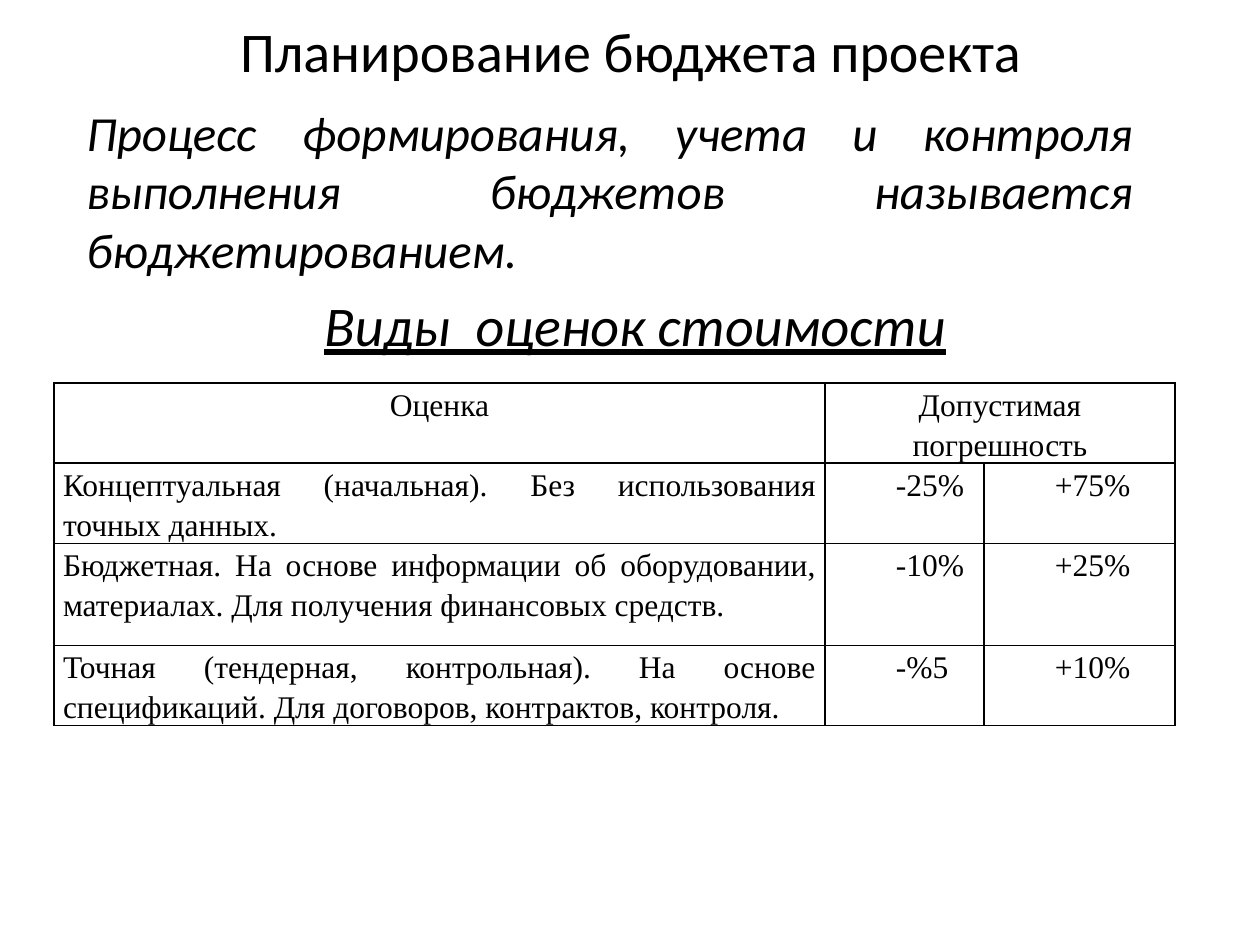
import pptx
import pptx.util
import pptx.dml.color
import pptx.enum.text
import pptx.oxml
import pptx.oxml.ns

# Content
TITLE = "Планирование бюджета проекта"
INTRO = ("Процесс формирования, учета и контроля выполнения бюджетов "
         "называется бюджетированием.")
HEADING = "Виды  оценок стоимости"
ROWS = [
    ("Оценка", "Допустимая погрешность", None),
    ("Концептуальная (начальная). Без использования точных данных.",
     "-25%", "+75%"),
    ("Бюджетная. На основе информации об оборудовании, материалах. "
     "Для получения финансовых средств.", "-10%", "+25%"),
    ("Точная (тендерная, контрольная). На основе спецификаций. "
     "Для договоров, контрактов, контроля.", "-%5", "+10%"),
]

# Layout in px
BOXES = {"title": (64, 26, 1134, 48), "intro": (74, 96, 1071, 191),
         "head": (312, 284, 654, 80)}
LEFT, TOP = 54, 383
COLS = [771, 159, 191]
HIGH = [70, 70, 102, 70]
PAD, INDENT = 9, 62

Align = pptx.enum.text.PP_ALIGN
Anchor = pptx.enum.text.MSO_ANCHOR
THEME = {
    "ink": "000000", "line": 1,
    "title": {"name": "Calibri", "size": 32},
    "intro": {"name": "Calibri", "size": 28, "italic": True},
    "head": {"name": "Calibri", "size": 32, "italic": True,
             "underline": True},
    "cell": {"name": "Times New Roman", "size": 18, "bold": False},
}


def px(n):
    return pptx.util.Emu(round(n * 914400 / 126))


def place(shape, key):
    for name, n in zip(("left", "top", "width", "height"), BOXES[key]):
        setattr(shape, name, px(n))


def write(frame, text, key, align):
    para = frame.paragraphs[0]
    para.alignment = align
    run = para.add_run()
    run.text = text
    for name, value in THEME[key].items():
        if name == "size":
            value = pptx.util.Pt(value)
        setattr(run.font, name, value)
    run.font.color.rgb = pptx.dml.color.RGBColor.from_string(THEME["ink"])
    return para


def border(cell):
    props = cell._tc.get_or_add_tcPr()
    width = pptx.util.Pt(THEME["line"])
    for n, side in enumerate(("lnL", "lnR", "lnT", "lnB")):
        props.insert(n, pptx.oxml.parse_xml(
            f'<a:{side} {pptx.oxml.ns.nsdecls("a")} w="{width}"><a:solidFill>'
            f'<a:srgbClr val="{THEME["ink"]}"/></a:solidFill></a:{side}>'))


def fill(cell, text, row, col):
    for name, value in {"margin_left": px(PAD), "margin_right": px(PAD),
                        "margin_top": 0, "margin_bottom": 0}.items():
        setattr(cell, name, value)
    cell.fill.background()
    border(cell)
    if text is None:
        return
    para = write(cell.text_frame, text, "cell",
                 Align.JUSTIFY if row else Align.CENTER)
    para.line_spacing = 1.15
    if row and col:
        para._p.get_or_add_pPr().set("indent", str(px(INDENT)))


def main():
    deck = pptx.Presentation()
    deck.slide_width, deck.slide_height = px(1260), px(945)
    slide = deck.slides.add_slide(deck.slide_layouts[5])

    # Title
    title = slide.shapes.title
    place(title, "title")
    title.text_frame.vertical_anchor = Anchor.MIDDLE
    write(title.text_frame, TITLE, "title", Align.CENTER)

    # Table
    table = slide.shapes.add_table(
        len(ROWS), len(COLS), px(LEFT), px(TOP),
        px(sum(COLS)), px(sum(HIGH))).table
    table.first_row = table.horz_banding = False
    for col, n in zip(table.columns, COLS):
        col.width = px(n)
    for row, n in zip(table.rows, HIGH):
        row.height = px(n)
    table.cell(0, 1).merge(table.cell(0, 2))
    for r, texts in enumerate(ROWS):
        for c, text in enumerate(texts):
            fill(table.cell(r, c), text, r, c)

    # Definition and table heading
    for key, text, align, wrap in (
            ("intro", INTRO, Align.JUSTIFY, True),
            ("head", HEADING, Align.LEFT, False)):
        box = slide.shapes.add_textbox(0, 0, 0, 0)
        place(box, key)
        box.text_frame.word_wrap = wrap
        write(box.text_frame, text, key, align)

    deck.save("out.pptx")


if __name__ == "__main__":
    main()
